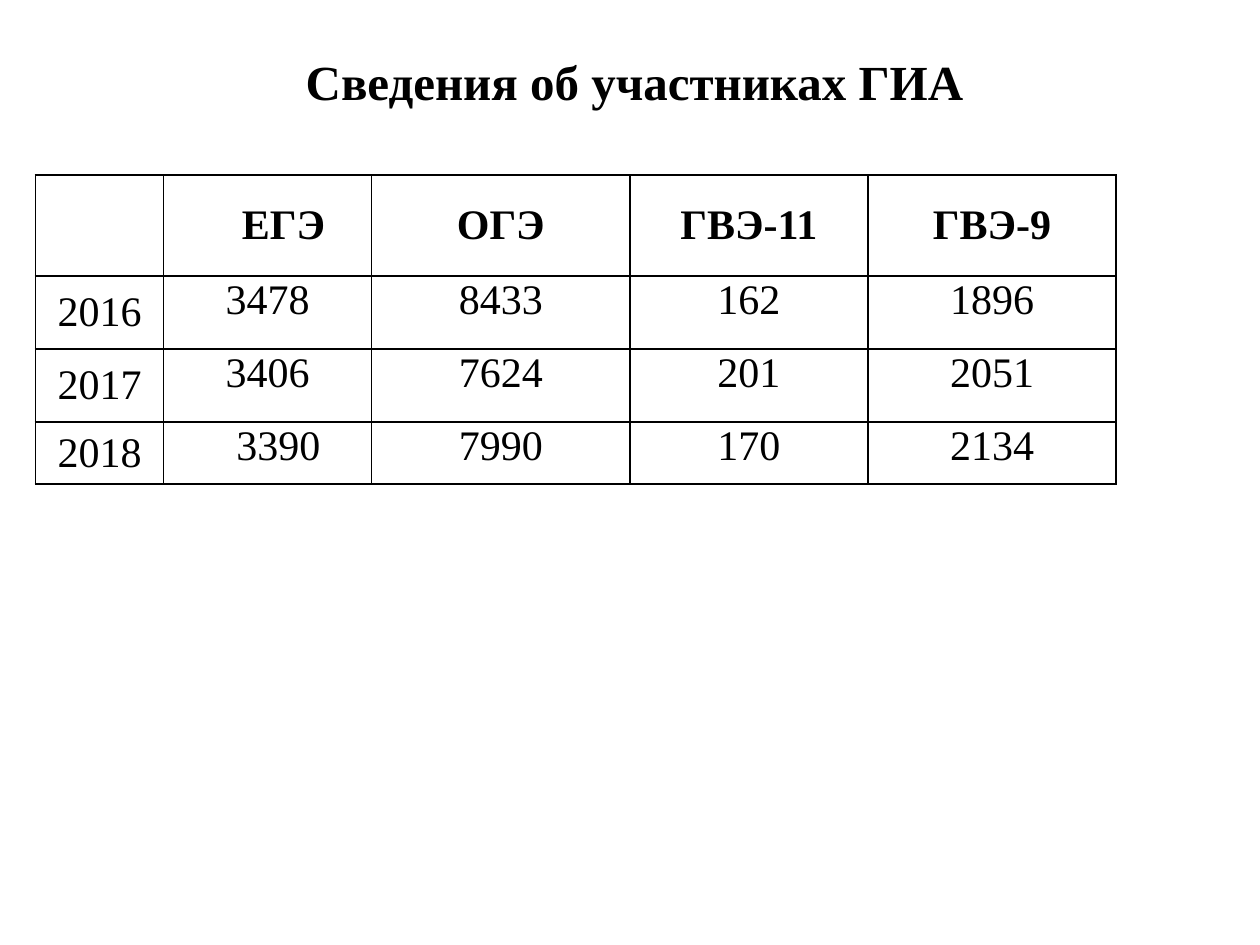
from lxml.etree import SubElement
from pptx import Presentation
from pptx.dml.color import RGBColor
from pptx.enum.text import MSO_ANCHOR as Anchor, PP_ALIGN as Align
from pptx.oxml.ns import qn
from pptx.util import Inches, Pt

COLORS = {"ink": "000000", "paper": "FFFFFF"}
FONT = "Times New Roman"

HEADERS = ["", "ЕГЭ", "ОГЭ", "ГВЭ-11", "ГВЭ-9"]
PARTICIPANTS = [
    ["2016", "3478", "8433", "162", "1896"],
    ["2017", "3406", "7624", "201", "2051"],
    ["2018", "3390", "7990", "170", "2134"],
]
COLUMN_WIDTHS = [1.02, 1.65, 2.05, 1.89, 1.97]
ROW_HEIGHTS = [0.8, 0.58, 0.58, 0.49]
CELL_MARGIN = 0.01
# Extra left margin that moves a centred entry to the right
LEFT_SHIFTS = {(0, 1): 0.25, (3, 1): 0.17}


def write_text(text_frame, text, size=24, bold=False, align=Align.CENTER):
    paragraph = text_frame.paragraphs[0]
    paragraph.alignment = align
    run = paragraph.add_run()
    run.text = text
    run.font.name = FONT
    run.font.size = Pt(size)
    run.font.bold = bold
    run.font.color.rgb = RGBColor.from_string(COLORS["ink"])


def add_borders(cell, width=1):
    properties = cell._tc.get_or_add_tcPr()
    for position, side in enumerate(("lnL", "lnR", "lnT", "lnB")):
        line = SubElement(properties, qn(f"a:{side}"), w=str(Pt(width)))
        fill = SubElement(line, qn("a:solidFill"))
        SubElement(fill, qn("a:srgbClr"), val=COLORS["ink"])
        properties.insert(position, line)  # borders come before the fill


def place_title(slide, left, top, width, height):
    title = slide.shapes.title
    title.left, title.top = Inches(left), Inches(top)
    title.width, title.height = Inches(width), Inches(height)
    title.text_frame.word_wrap = False
    title.text_frame.vertical_anchor = Anchor.TOP
    write_text(title.text_frame, "Сведения об участниках ГИА", size=28, bold=True)


def format_cell(cell, text, row, column):
    cell.fill.solid()
    cell.fill.fore_color.rgb = RGBColor.from_string(COLORS["paper"])
    add_borders(cell)
    cell.margin_right = cell.margin_top = cell.margin_bottom = Inches(CELL_MARGIN)
    cell.margin_left = Inches(CELL_MARGIN + LEFT_SHIFTS.get((row, column), 0))
    is_heading = row == 0 or column == 0
    cell.vertical_anchor = Anchor.MIDDLE if is_heading else Anchor.TOP
    if text:
        write_text(cell.text_frame, text, bold=row == 0)


def place_table(slide, left, top):
    rows = [HEADERS, *PARTICIPANTS]
    frame = slide.shapes.add_table(
        len(rows), len(HEADERS), Inches(left), Inches(top),
        Inches(sum(COLUMN_WIDTHS)), Inches(sum(ROW_HEIGHTS)))
    table = frame.table
    table.first_row = table.horz_banding = False
    for column, width in zip(table.columns, COLUMN_WIDTHS):
        column.width = Inches(width)
    for table_row, height in zip(table.rows, ROW_HEIGHTS):
        table_row.height = Inches(height)
    for row, values in enumerate(rows):
        for column, text in enumerate(values):
            format_cell(table.cell(row, column), text, row, column)


def main():
    presentation = Presentation()
    presentation.slide_width, presentation.slide_height = Inches(10), Inches(7.5)
    slide = presentation.slides.add_slide(presentation.slide_layouts[5])

    # Heading
    place_title(slide, 2.32, 0.36, 5.43, 0.57)
    # Participants by year and exam
    place_table(slide, 0.28, 1.39)

    presentation.save("out.pptx")


if __name__ == "__main__":
    main()
